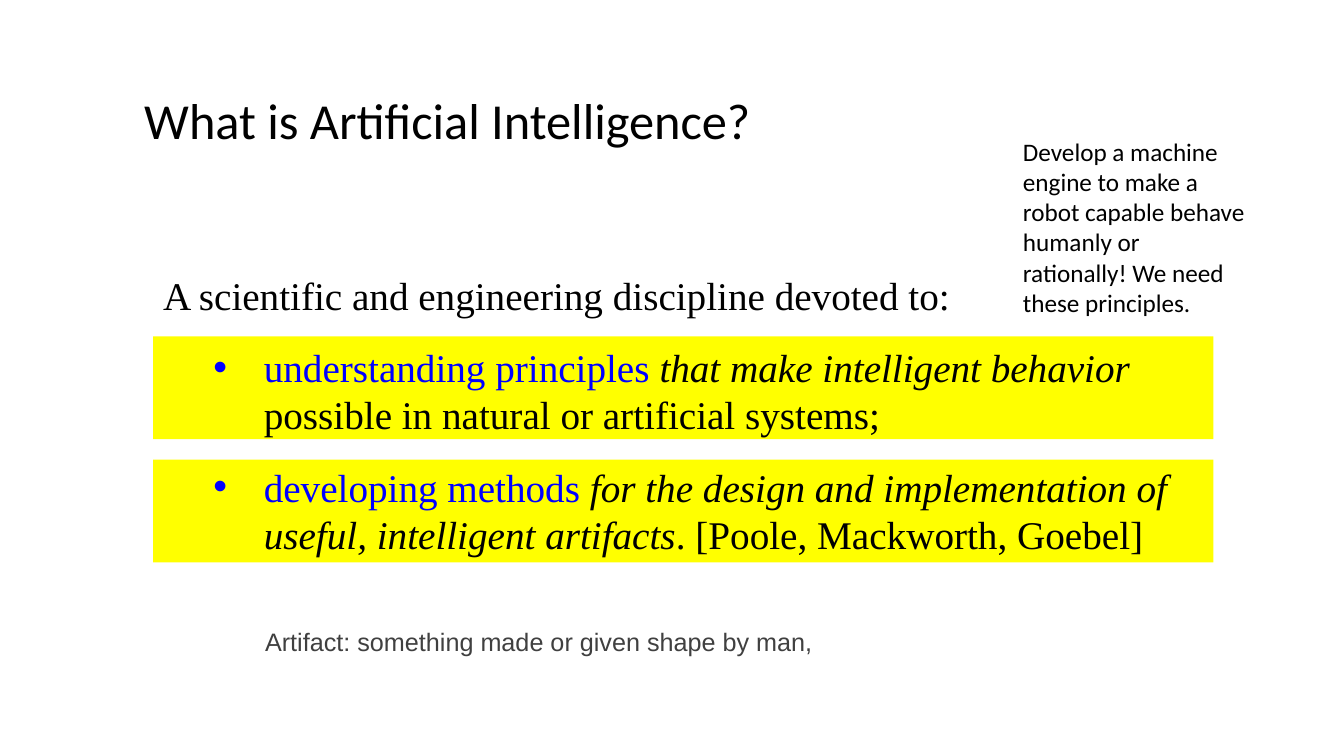
from dataclasses import dataclass

from lxml import etree
from pptx import Presentation
from pptx.dml.color import RGBColor
from pptx.enum.shapes import MSO_SHAPE
from pptx.enum.text import MSO_ANCHOR, MSO_AUTO_SIZE, PP_ALIGN
from pptx.oxml.ns import qn
from pptx.shapes.autoshape import Shape
from pptx.slide import Slide
from pptx.text.text import TextFrame, _Paragraph
from pptx.util import Cm, Pt

RECTANGLE = MSO_SHAPE.RECTANGLE
TOP = MSO_ANCHOR.TOP
FIT_SHAPE = MSO_AUTO_SIZE.SHAPE_TO_FIT_TEXT
LEFT = PP_ALIGN.LEFT

BLACK = RGBColor(0x00, 0x00, 0x00)
BLUE = RGBColor(0x00, 0x00, 0xFF)
GREY = RGBColor(0x40, 0x40, 0x40)
YELLOW = RGBColor(0xFF, 0xFF, 0x00)

TITLE_ONLY = 5
BODY_LEFT, BODY_WIDTH = Cm(3.86), Cm(26.72)
BAND_HEIGHT = Cm(2.59)
BAND_TOPS = (Cm(8.48), Cm(11.58))


@dataclass(frozen=True)
class Box:
    left: Cm
    top: Cm
    width: Cm
    height: Cm
    wrap: bool = True


@dataclass(frozen=True)
class Style:
    font: str
    size: int
    color: RGBColor = BLACK


@dataclass(frozen=True)
class Goal:
    lead: str
    italic: str
    rest: str


TITLE_STYLE = Style("Calibri", 36)
BODY_STYLE = Style("Times New Roman", 28)
LEAD_STYLE = Style("Times New Roman", 28, BLUE)
ARTIFACT_STYLE = Style("Arial", 18, GREY)
REMARK_STYLE = Style("Calibri", 18)

GOALS = (
    Goal("understanding principles ", "that make intelligent behavior ",
         "possible in natural or artificial systems;"),
    Goal("developing methods ",
         "for the design and implementation of useful, intelligent artifacts",
         ". [Poole, Mackworth, Goebel]"),
)


def add_run(p: _Paragraph, text: str, style: Style, italic: bool = False) -> None:
    r = p.add_run()
    r.text = text
    r.font.name = style.font
    r.font.size = Pt(style.size)
    r.font.color.rgb = style.color
    r.font.italic = italic


def set_bullet(p: _Paragraph) -> None:
    """Give the paragraph a hanging round bullet."""
    pPr = p._p.get_or_add_pPr()
    pPr.set("marL", str(Cm(2.54)))
    pPr.set("indent", str(-Cm(1.27)))
    etree.SubElement(pPr, qn("a:buFont")).set("typeface", "Arial")
    etree.SubElement(pPr, qn("a:buChar")).set("char", "•")


def place(sp: Shape, box: Box) -> TextFrame:
    """Position a text shape and set how its text flows."""
    sp.left, sp.top, sp.width, sp.height = box.left, box.top, box.width, box.height
    tf = sp.text_frame
    tf.word_wrap = box.wrap
    tf.auto_size = FIT_SHAPE
    tf.vertical_anchor = TOP
    return tf


def add_text_box(slide: Slide, box: Box) -> TextFrame:
    sp = slide.shapes.add_textbox(box.left, box.top, box.width, box.height)
    return place(sp, box)


def add_band(slide: Slide, top: Cm) -> None:
    sp = slide.shapes.add_shape(RECTANGLE, BODY_LEFT, top, BODY_WIDTH, BAND_HEIGHT)
    sp.shadow.inherit = False
    sp.fill.solid()
    sp.fill.fore_color.rgb = YELLOW
    sp.line.fill.background()


def add_definition(slide: Slide) -> None:
    tf = add_text_box(slide, Box(BODY_LEFT, Cm(6.71), BODY_WIDTH, Cm(7.52)))
    p = tf.paragraphs[0]
    p.space_after = Pt(18)
    add_run(p, "A scientific and engineering discipline devoted to:", BODY_STYLE)
    for goal in GOALS:
        p = tf.add_paragraph()
        p.space_after = Pt(18)
        set_bullet(p)
        add_run(p, goal.lead, LEAD_STYLE)
        add_run(p, goal.italic, BODY_STYLE, italic=True)
        add_run(p, goal.rest, BODY_STYLE)


def main() -> None:
    prs = Presentation()
    prs.slide_width, prs.slide_height = Cm(33.87), Cm(19.05)
    slide = prs.slides.add_slide(prs.slide_layouts[TITLE_ONLY])

    title_box = Box(Cm(3.38), Cm(2.11), Cm(15.95), Cm(1.8), wrap=False)
    p = place(slide.shapes.title, title_box).paragraphs[0]
    p.alignment = LEFT
    add_run(p, "What is Artificial Intelligence?", TITLE_STYLE)

    for top in BAND_TOPS:
        add_band(slide, top)
    add_definition(slide)

    artifact_box = Box(Cm(6.43), Cm(15.65), Cm(14.45), Cm(1.02), wrap=False)
    p = add_text_box(slide, artifact_box).paragraphs[0]
    add_run(p, "Artifact: something made or given shape by man,", ARTIFACT_STYLE)

    remark_box = Box(Cm(25.53), Cm(3.3), Cm(6.1), Cm(4.88))
    p = add_text_box(slide, remark_box).paragraphs[0]
    add_run(p, "Develop a machine engine to make a robot capable behave humanly "
               "or rationally! We need these principles.", REMARK_STYLE)

    prs.save("out.pptx")


if __name__ == "__main__":
    main()
